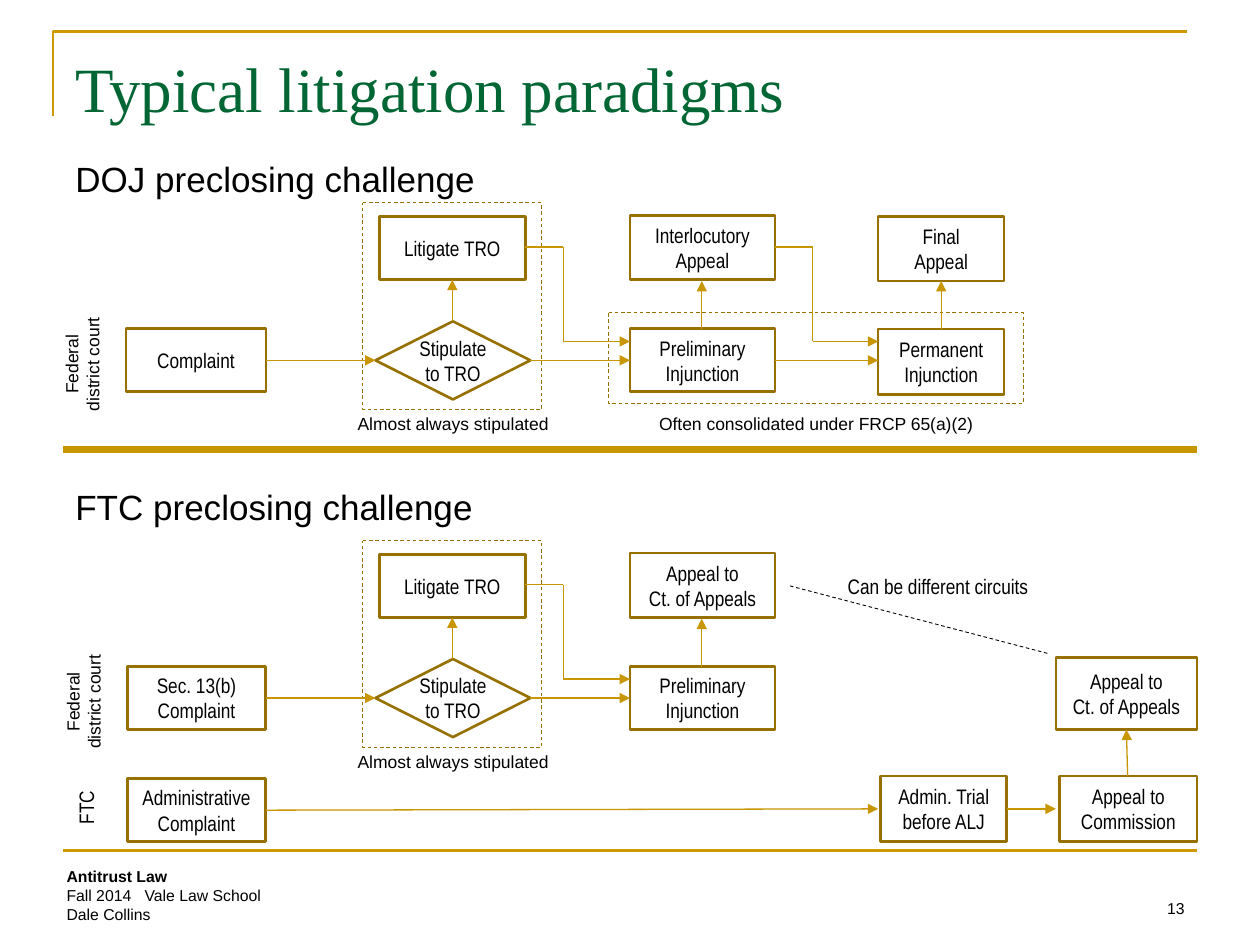
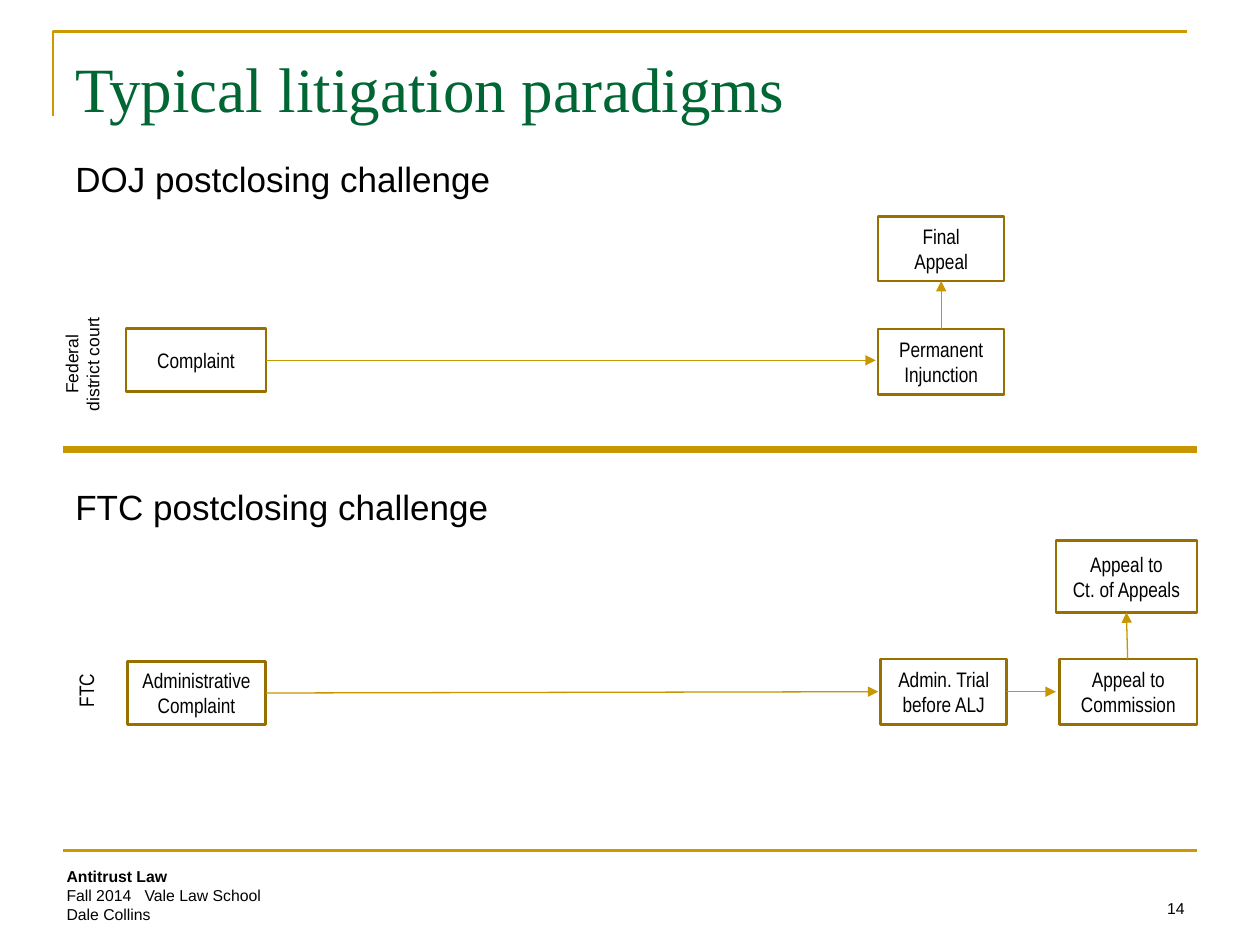
import pptx
import pptx.util
import pptx.dml.color
import pptx.enum.dml
import pptx.enum.shapes
import pptx.enum.text
from dataclasses import dataclass
from lxml import etree

Inches, Pt = pptx.util.Inches, pptx.util.Pt
SHAPE = pptx.enum.shapes.MSO_SHAPE
ALIGN = pptx.enum.text.PP_ALIGN
ANCHOR = pptx.enum.text.MSO_ANCHOR
DASH = pptx.enum.dml.MSO_LINE.DASH
NS = "{http://schemas.openxmlformats.org/drawingml/2006/main}"


@dataclass(frozen=True)
class Theme:
    frame: str = "CC9900"
    arrow: str = "C89600"
    box: str = "977100"
    title: str = "006633"
    text: str = "000000"
    serif: str = "Times New Roman"
    sans: str = "Arial"
    narrow: str = "Arial Narrow"
    title_size: int = 36
    heading_size: int = 20
    step_size: int = 12
    note_size: int = 10
    footer_size: int = 9


theme = Theme()


def write(tf, text, size, font=theme.sans, color=theme.text, align=ALIGN.CENTER,
          anchor=ANCHOR.MIDDLE, bold_first=False):
    """Fill a text frame, one line break between the lines of text."""
    tf.word_wrap = True
    tf.vertical_anchor = anchor
    p = tf.paragraphs[0]
    p.alignment = align
    for i, line in enumerate(text.split("\n")):
        if i:
            p.add_line_break()
        r = p.add_run()
        r.text = line
        r.font.size = Pt(size)
        r.font.name = font
        r.font.bold = bold_first and i == 0
        r.font.color.rgb = pptx.dml.color.RGBColor.from_string(color)
    return p


def draw_path(s, points, color=theme.arrow, width=0.75, arrow=True, dash=None):
    """Join the points with straight connectors, the last one with an arrowhead."""
    for i, (start, end) in enumerate(zip(points, points[1:])):
        c = s.shapes.add_connector(pptx.enum.shapes.MSO_CONNECTOR.STRAIGHT,
                                   *map(Inches, start + end))
        c.line.color.rgb = pptx.dml.color.RGBColor.from_string(color)
        c.line.width = Pt(width)
        if dash:
            c.line.dash_style = dash
        if arrow and i == len(points) - 2:
            etree.SubElement(c.line._get_or_add_ln(), NS + "tailEnd", type="triangle")
        etree.SubElement(c._element.spPr, NS + "effectLst")


# Steps of each track: text, left, top, width, height
COURT_DROP = 2.68    # from the DOJ court track down to the FTC one
ADMIN_TOP = {"preclosing": 6.16, "postclosing": 5.23}

slides = []
for number, kind in ((13, "preclosing"), (14, "postclosing")):
    top = ADMIN_TOP[kind]
    appeal_top = top - 0.94
    mid = top + 0.26
    boxes = [
        ("Complaint", 1, 2.61, 1.11, 0.5),
        ("Permanent\nInjunction", 6.97, 2.61, 1, 0.52),
        ("Final\nAppeal", 6.97, 1.72, 1, 0.51),
        ("Administrative\nComplaint", 1.01, top + 0.02, 1.1, 0.5),
        ("Admin. Trial\nbefore ALJ", 6.99, top, 1, 0.52),
        ("Appeal to\nCommission", 8.41, top, 1.09, 0.52),
        ("Appeal to\nCt. of Appeals", 8.38, appeal_top, 1.12, 0.57),
    ]
    paths = [
        [(7.47, 2.61), (7.47, 2.23)],
        [(2.11, mid + 0.01), (6.97, mid)],
        [(7.99, mid), (8.38, mid)],
        [(8.95, top), (8.94, appeal_top + 0.57)],
    ]
    diamonds, frames, notes = [], [], []
    side_labels = [("Federal\ndistrict court", 0.65, 2.89, theme.note_size, theme.sans),
                   ("FTC", 0.68, mid - 0.01, theme.step_size, theme.narrow)]
    if kind == "preclosing":
        # Stipulation, TRO and preliminary injunction occur on both court tracks
        for dy, appeal in ((0, "Interlocutory\nAppeal"),
                           (COURT_DROP, "Appeal to\nCt. of Appeals")):
            boxes += [("Litigate TRO", 3.01, 1.72 + dy, 1.16, 0.5),
                      ("Preliminary\nInjunction", 5, 2.61 + dy, 1.15, 0.5),
                      (appeal, 5, 1.71 + dy, 1.15, 0.51)]
            diamonds.append(("Stipulate\nto TRO", 2.98, 2.55 + dy, 1.23, 0.62))
            paths += [[(2.11, 2.86 + dy), (2.98, 2.86 + dy)],
                      [(4.21, 2.86 + dy), (5, 2.86 + dy)],
                      [(3.59, 2.55 + dy), (3.59, 2.22 + dy)],
                      [(5.57, 2.61 + dy), (5.57, 2.23 + dy)],
                      [(4.17, 1.96 + dy), (4.47, 1.96 + dy),
                       (4.47, 2.71 + dy), (5, 2.71 + dy)]]
            frames.append((2.88, 1.61 + dy, 1.42, 1.64))
            notes.append(("Almost always stipulated", 2.7, 3.23 + dy, 1.79))
        boxes.append(("Sec. 13(b)\nComplaint", 1.01, 2.61 + COURT_DROP, 1.1, 0.5))
        paths += [[(6.15, 2.86), (6.97, 2.86)],
                  [(6.15, 1.96), (6.45, 1.96), (6.45, 2.71), (6.97, 2.71)]]
        frames.append((4.83, 2.48, 3.29, 0.72))
        notes.append(("Often consolidated under FRCP 65(a)(2)", 4.83, 3.23, 3.29))
        side_labels.append(("Federal\ndistrict court", 0.66, 2.89 + COURT_DROP,
                            theme.note_size, theme.sans))
    else:
        paths.append([(2.11, 2.86), (6.95, 2.86)])
    slides.append((number, kind, boxes, diamonds, frames, paths, notes, side_labels))

prs = pptx.Presentation()
prs.slide_width, prs.slide_height = Inches(10), Inches(7.5)

for number, kind, boxes, diamonds, frames, paths, notes, side_labels in slides:
    s = prs.slides.add_slide(prs.slide_layouts[6])

    # Corner frame, footer rule and divider
    fb = s.shapes.build_freeform(Inches(0.42), Inches(0.92))
    fb.add_line_segments([(Inches(0.42), Inches(0.25)), (Inches(9.42), Inches(0.25))],
                         close=False)
    sp = fb.convert_to_shape()
    sp.shadow.inherit = False
    sp.fill.background()
    sp.line.color.rgb = pptx.dml.color.RGBColor.from_string(theme.frame)
    sp.line.width = Pt(1.5)
    draw_path(s, [(0.5, 6.75), (9.5, 6.75)], theme.frame, 1.5, arrow=False)
    draw_path(s, [(0.5, 3.57), (9.5, 3.57)], theme.arrow, 4, arrow=False)

    # Title, headings and footer
    tb = s.shapes.add_textbox(Inches(0.5), Inches(0.3), Inches(9), Inches(0.78))
    write(tb.text_frame, "Typical litigation paradigms", theme.title_size,
          theme.serif, theme.title, ALIGN.LEFT)
    for agency, y in (("DOJ", 1.2), ("FTC", 3.8)):
        tb = s.shapes.add_textbox(Inches(0.5), Inches(y), Inches(4), Inches(0.44))
        write(tb.text_frame, f"{agency} {kind} challenge", theme.heading_size,
              align=ALIGN.LEFT)
    tb = s.shapes.add_textbox(Inches(0.43), Inches(6.83), Inches(4.67), Inches(0.56))
    p = write(tb.text_frame, "Antitrust Law\nFall 2014\tVale Law School\nDale Collins",
              theme.footer_size, align=ALIGN.LEFT, anchor=ANCHOR.TOP, bold_first=True)
    tabs = etree.SubElement(p._p.get_or_add_pPr(), NS + "tabLst")
    etree.SubElement(tabs, NS + "tab", pos=str(Inches(0.62)), algn="l")
    tb = s.shapes.add_textbox(Inches(7.17), Inches(6.83), Inches(2.33), Inches(0.5))
    write(tb.text_frame, str(number), theme.footer_size, align=ALIGN.RIGHT,
          anchor=ANCHOR.BOTTOM)

    # Steps, decisions and dashed groups
    outlines = [(SHAPE.FLOWCHART_PROCESS, box, 1.5) for box in boxes]
    outlines += [(SHAPE.DIAMOND, diamond, 1.5) for diamond in diamonds]
    outlines += [(SHAPE.FLOWCHART_PROCESS, ("", *frame), 0.5) for frame in frames]
    for preset, (text, *place), width in outlines:
        sp = s.shapes.add_shape(preset, *map(Inches, place))
        sp.shadow.inherit = False
        sp.fill.background()
        sp.line.color.rgb = pptx.dml.color.RGBColor.from_string(theme.box)
        sp.line.width = Pt(width)
        if text:
            tf = sp.text_frame
            tf.margin_left = tf.margin_right = tf.margin_top = tf.margin_bottom = 0
            write(tf, text, theme.step_size, theme.narrow)
            tf.word_wrap = False
        else:
            sp.line.dash_style = DASH

    # Arrows
    for path in paths:
        draw_path(s, path)

    # Notes under the groups
    for text, x, y, w in notes:
        tb = s.shapes.add_textbox(Inches(x), Inches(y), Inches(w), Inches(0.27))
        write(tb.text_frame, text, theme.note_size)

    # Track names, turned to read upwards about their centre
    for text, cx, cy, size, font in side_labels:
        tb = s.shapes.add_textbox(Inches(cx - 0.55), Inches(cy - 0.22),
                                  Inches(1.1), Inches(0.44))
        tb.rotation = 270
        write(tb.text_frame, text, size, font)

    # Link between the two appeals
    if kind == "preclosing":
        draw_path(s, [(6.27, 4.65), (8.33, 5.19)], theme.text, 0.5, arrow=False, dash=DASH)
        tb = s.shapes.add_textbox(Inches(6.63), Inches(4.5), Inches(1.8), Inches(0.3))
        write(tb.text_frame, "Can be different circuits", theme.step_size, theme.narrow,
              align=ALIGN.LEFT)

prs.save("out.pptx")
